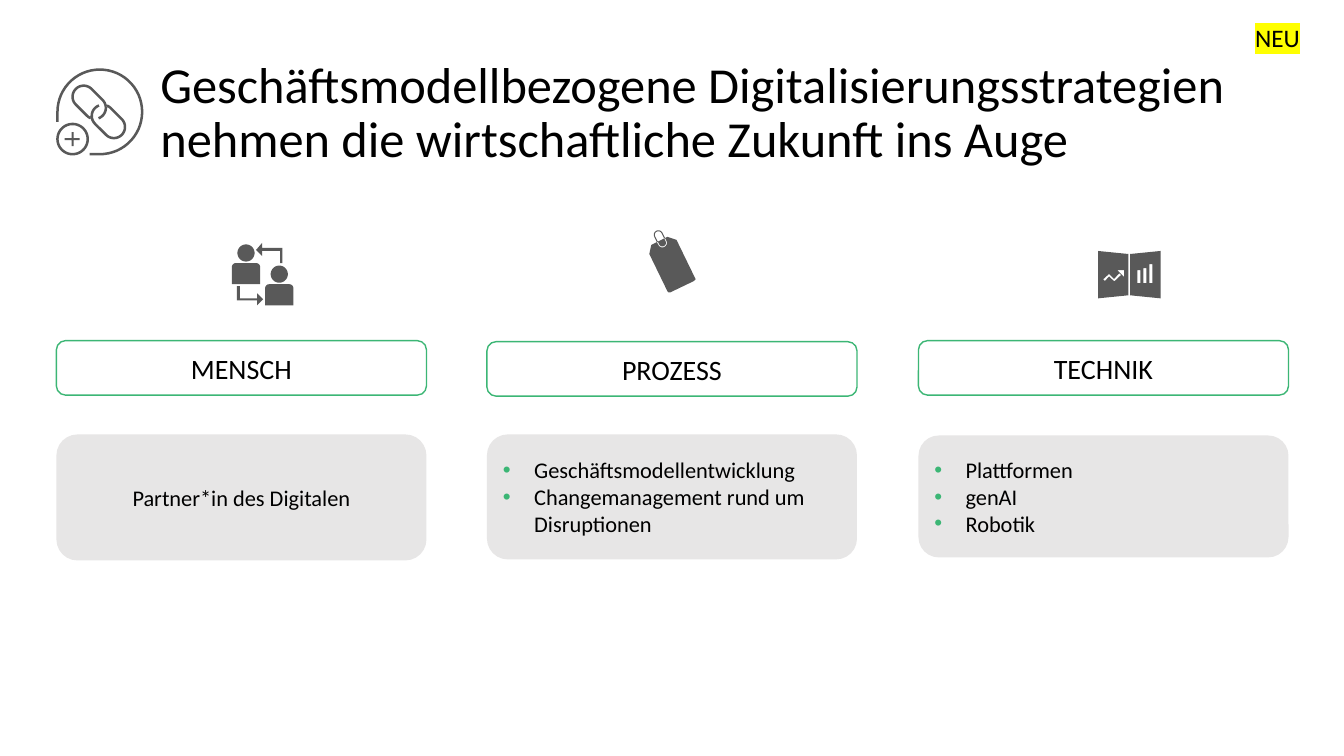
"""Build the slide on digitalisation strategies with three columns."""
from dataclasses import dataclass
from math import cos, hypot, radians, sin

from lxml import etree
from pptx import Presentation
from pptx.dml.color import RGBColor
from pptx.enum.shapes import MSO_SHAPE
from pptx.enum.text import MSO_ANCHOR, MSO_AUTO_SIZE, PP_ALIGN
from pptx.oxml.ns import qn
from pptx.util import Pt

PX = 9144
FLOW, ROUND = MSO_SHAPE.FLOWCHART_ALTERNATE_PROCESS, MSO_SHAPE.ROUNDED_RECTANGLE
LEFT, CENTER = PP_ALIGN.LEFT, PP_ALIGN.CENTER
MIDDLE, TOP = MSO_ANCHOR.MIDDLE, MSO_ANCHOR.TOP
NO_FIT = MSO_AUTO_SIZE.NONE
BLACK, GREEN, GREY, DARK, YELLOW = "000000", "3CB675", "E7E6E6", "595959", "FFFF00"
LINK_R, LINK_SHIFT = 11, 11

Points = list[tuple[float, float]]


@dataclass
class Column:
    heading: str
    lines: list[str]
    heading_kind: int
    card_kind: int
    heading_top: int
    card_top: int
    card_height: int


COLUMNS = [
    Column("MENSCH", ["Partner*in des Digitalen"], FLOW, FLOW, 338, 431, 125),
    Column("PROZESS", ["Geschäftsmodellentwicklung", "Changemanagement rund um Disruptionen"],
           FLOW, ROUND, 339, 431, 124),
    Column("TECHNIK", ["Plattformen", "genAI", "Robotik"], ROUND, FLOW, 338, 432, 121),
]


def rgb(colour: str) -> RGBColor:
    return RGBColor.from_string(colour)


def place(s, left: int, top: int, width: int, height: int) -> None:
    box = {"left": left, "top": top, "width": width, "height": height}
    for name, value in box.items():
        setattr(s, name, value * PX)


def add_bullet(p) -> None:
    pPr = p._p.get_or_add_pPr()
    pPr.set("marL", str(31 * PX))
    pPr.set("indent", str(-31 * PX))
    clr = etree.SubElement(pPr, qn("a:buClr"))
    etree.SubElement(clr, qn("a:srgbClr"), val=GREEN)
    etree.SubElement(pPr, qn("a:buFont"), typeface="Arial")
    etree.SubElement(pPr, qn("a:buChar"), char="•")


def write(s, lines: list[str], size: int, align=LEFT, anchor=MIDDLE, bullets=False) -> None:
    tf = s.text_frame
    for name, value in {"word_wrap": True, "auto_size": NO_FIT, "vertical_anchor": anchor}.items():
        setattr(tf, name, value)
    for i, line in enumerate(lines):
        p = tf.add_paragraph() if i else tf.paragraphs[0]
        p.alignment = align
        if bullets:
            add_bullet(p)
        r = p.add_run()
        r.text = line
        for name, value in {"size": Pt(size), "name": "Calibri"}.items():
            setattr(r.font, name, value)
        r.font.color.rgb = rgb(BLACK)


def add_box(shapes, kind, left: int, top: int, width: int, height: int,
            fill: str = "", line: str = ""):
    s = shapes.add_shape(kind, left * PX, top * PX, width * PX, height * PX)
    s.shadow.inherit = False
    if fill:
        s.fill.solid()
        s.fill.fore_color.rgb = rgb(fill)
    else:
        s.fill.background()
    if line:
        s.line.color.rgb = rgb(line)
        s.line.width = Pt(1)
    else:
        s.line.fill.background()
    return s


def arc(x: float, y: float, r: float, start: int, end: int) -> Points:
    steps = max(4, (end - start) // 6)
    angles = [radians(start + (end - start) * i / steps) for i in range(steps + 1)]
    return [(x + r * cos(a), y + r * sin(a)) for a in angles]


def rect(x: int, y: int, width: int, height: int) -> Points:
    return [(x, y), (x + width, y), (x + width, y + height), (x, y + height)]


def stroke(points: Points, width: float) -> Points:
    outer, inner = [], []
    last = len(points) - 1
    for i, (x, y) in enumerate(points):
        (x0, y0), (x1, y1) = points[max(i - 1, 0)], points[min(i + 1, last)]
        half = width / 2 / hypot(x1 - x0, y1 - y0)
        nx, ny = (y0 - y1) * half, (x1 - x0) * half
        outer.append((x + nx, y + ny))
        inner.append((x - nx, y - ny))
    return outer + inner[::-1]


def add_icon(shapes, contours: list[Points]) -> None:
    scaled = [[(round(x * PX), round(y * PX)) for x, y in c] for c in contours]
    builder = shapes.build_freeform(*scaled[0][0], scale=1.0)
    for i, contour in enumerate(scaled):
        if i:
            builder.move_to(*contour[0])
        builder.add_line_segments(contour[1:], close=True)
    s = builder.convert_to_shape()
    s.shadow.inherit = False
    s.fill.solid()
    s.fill.fore_color.rgb = rgb(DARK)
    s.line.fill.background()


def chain_link(x: int, y: int, turn: int) -> Points:
    shift = LINK_SHIFT if turn else -LINK_SHIFT
    return (arc(x, y, LINK_R, 112 + turn, 135 + turn)
            + arc(x + shift, y + shift, LINK_R, 135 + turn, 315 + turn)
            + arc(x, y, LINK_R, 315 + turn, 430 + turn))


def link_icon() -> list[Points]:
    frame = [(57, 121)] + arc(99, 111, 42, 180, 450) + [(89, 153)]
    lines = [frame, arc(72, 138, 15, 0, 360), chain_link(94, 107, 0), chain_link(102, 115, 180)]
    plus = [(71, 131), (73, 131), (73, 137), (79, 137), (79, 139), (73, 139),
            (73, 145), (71, 145), (71, 139), (64, 139), (64, 137), (71, 137)]
    return [stroke(line, 2.5) for line in lines] + [plus]


def people_icon() -> list[Points]:
    contours = [
        [(235, 284), (238, 284), (238, 296), (255, 296), (255, 291),
         (261, 297), (255, 303), (255, 298), (235, 298)],
        [(260, 241), (260, 246), (280, 246), (280, 261), (278, 261),
         (278, 249), (260, 249), (260, 254), (254, 248)],
    ]
    for x, y in [(244, 251), (277, 272)]:
        shoulders = arc(x - 10, y + 14, 4, 180, 270) + arc(x + 10, y + 14, 4, 270, 360)
        contours += [arc(x, y, 8.5, 0, 360), shoulders + [(x + 14, y + 31), (x - 14, y + 31)]]
    return contours


def tag_icon() -> list[Points]:
    body = [(662, 235), (671, 238), (689, 275), (690, 277), (688, 279),
            (665, 290), (663, 290), (662, 289), (644, 252), (646, 243)]
    loop = arc(653, 233, 4, 154, 334) + arc(657, 241, 4, 334, 514) + arc(653, 233, 4, 154, 160)
    return [body, stroke(loop, 1)]


def chart_icon() -> list[Points]:
    page = [(1119, 252), (1089, 249), (1089, 296), (1119, 293)]
    trend = stroke([(1095, 278), (1100, 273), (1105, 278), (1111, 272)], 2.5)
    bars = [rect(1128 + 6 * i, top, 3, 281 - top) for i, top in enumerate([268, 266, 262])]
    return [page, [(2240 - x, y) for x, y in page], trend,
            [(1108, 268), (1115, 268), (1115, 275)], *bars]


def main() -> None:
    prs = Presentation()
    prs.slide_width, prs.slide_height = 1333 * PX, 750 * PX
    slide = prs.slides.add_slide(prs.slide_layouts[5])
    shapes = slide.shapes

    title = shapes.title
    place(title, 149, 41, 1086, 145)
    write(title, ["Geschäftsmodellbezogene Digitalisierungsstrategien "
                  "nehmen die wirtschaftliche Zukunft ins Auge"], 36)
    title.text_frame.paragraphs[0].line_spacing = 0.9

    for i, col in enumerate(COLUMNS):
        left = 56 + 855 * i // 2
        s = add_box(shapes, col.heading_kind, left, col.heading_top, 367, 54, line=GREEN)
        write(s, [col.heading], 20, CENTER)
        s = add_box(shapes, col.card_kind, left, col.card_top, 367, col.card_height, fill=GREY)
        bullets = len(col.lines) > 1
        write(s, col.lines, 16, LEFT if bullets else CENTER, bullets=bullets)

    for contours in [link_icon(), people_icon(), tag_icon(), chart_icon()]:
        add_icon(shapes, contours)

    badge = shapes.add_textbox(1235 * PX, 17 * PX, 98 * PX, 40 * PX)
    write(badge, ["NEU"], 18, anchor=TOP)
    rPr = badge.text_frame.paragraphs[0].runs[0]._r.get_or_add_rPr()
    highlight = etree.Element(qn("a:highlight"))
    etree.SubElement(highlight, qn("a:srgbClr"), val=YELLOW)
    rPr.find(qn("a:solidFill")).addnext(highlight)

    prs.save("out.pptx")


if __name__ == "__main__":
    main()
